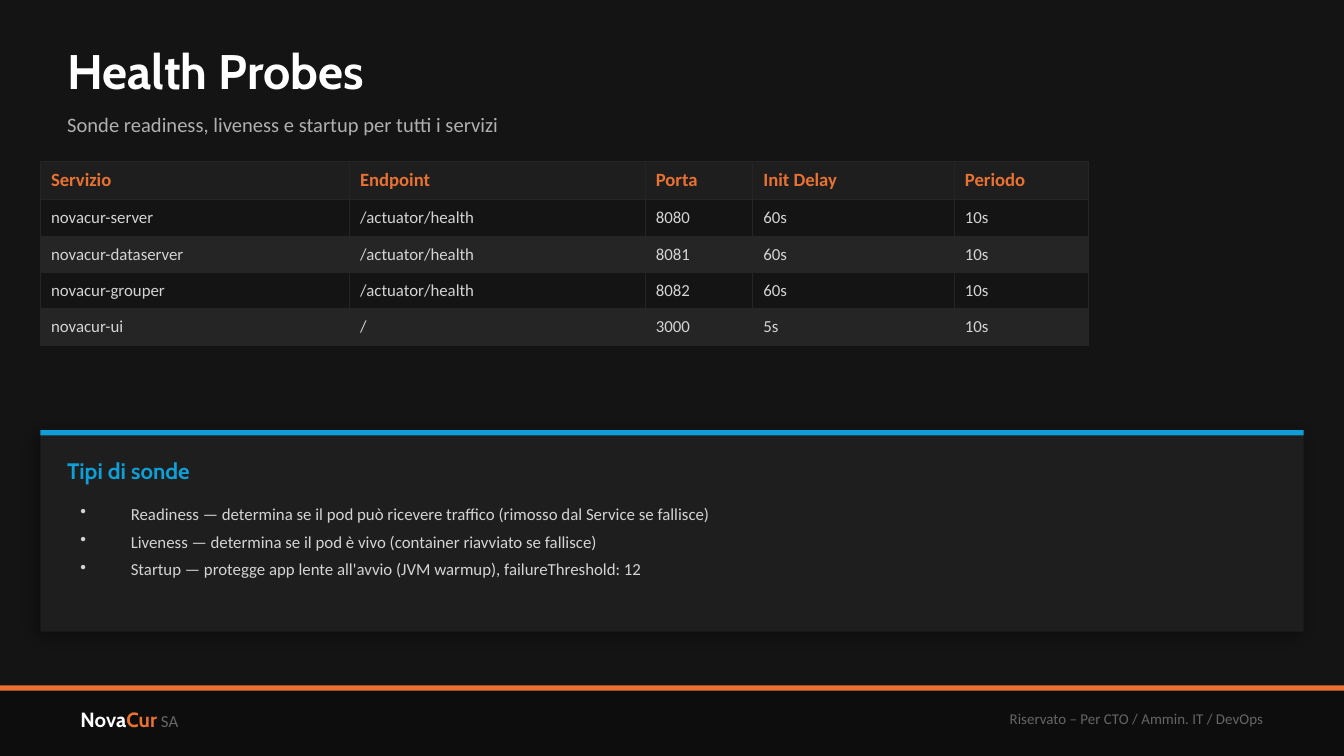
from lxml import etree
from pptx import Presentation, util as u
from pptx.dml.color import RGBColor
from pptx.enum import shapes, text
from pptx.oxml import parse_xml
from pptx.oxml.ns import nsdecls, qn

BACK = RGBColor(0x14, 0x14, 0x14)
DARK = RGBColor(0x0D, 0x0D, 0x0D)
CARD = RGBColor(0x1E, 0x1E, 0x1E)
BAND = RGBColor(0x25, 0x25, 0x25)
WHITE = RGBColor(0xFF, 0xFF, 0xFF)
LIGHT = RGBColor(0xD4, 0xD4, 0xD4)
GREY = RGBColor(0xB0, 0xB0, 0xB0)
DIM = RGBColor(0x66, 0x66, 0x66)
ORANGE = RGBColor(0xE9, 0x71, 0x32)
BLUE = RGBColor(0x0F, 0x9E, 0xD5)
HEAD, BODY = "Cabin", "Calibri"

deck = Presentation()
deck.slide_width, deck.slide_height = u.Inches(10), u.Inches(5.625)
# Grid: 100 columns by 112.5 rows
COL = deck.slide_width / 100
ROW = deck.slide_height / 112.5
slide = deck.slides.add_slide(deck.slide_layouts[5])
slide.background.fill.solid()
slide.background.fill.fore_color.rgb = BACK


def bar(x, y, w, h, color):
    box = slide.shapes.add_shape(shapes.MSO_SHAPE.RECTANGLE, int(x * COL),
                                 int(y * ROW), int(w * COL), int(h * ROW))
    box.shadow.inherit = False
    box.fill.solid()
    box.fill.fore_color.rgb = color
    box.line.fill.background()
    return box


def style(font, face, size, color, bold=False):
    font.name, font.size, font.bold = face, u.Pt(size), bold
    font.color.rgb = color


# Footer band
bar(0, 102, 100, 10.5, DARK)
bar(0, 102, 100, 0.8, ORANGE)

# Card with soft shadow and top rule
card = bar(3, 64, 94, 30, CARD)
glow = card._element.spPr.find(qn("a:effectLst"))
glow.append(parse_xml(
    f'<a:outerShdw {nsdecls("a")} blurRad="{u.Pt(8)}" dist="{u.Pt(3)}" '
    'dir="8100000" algn="bl" rotWithShape="0"><a:srgbClr val="000000">'
    '<a:alpha val="35000"/></a:srgbClr></a:outerShdw>'))
bar(3, 64, 94, 0.8, BLUE)

# Title, subtitle and card heading
lines = [
    ("Health Probes", 5, 11, HEAD, 26, WHITE, True),
    ("Sonde readiness, liveness e startup per tutti i servizi",
     15, 7, BODY, 11, GREY, False),
    ("Tipi di sonde", 67, 6, HEAD, 12, BLUE, True),
]
for n, (words, y, h, face, size, color, bold) in enumerate(lines):
    box = slide.shapes.add_textbox(0, 0, 0, 0) if n else slide.shapes.title
    box.left, box.top = int(5 * COL), int(y * ROW)
    box.width, box.height = int(90 * COL), int(h * ROW)
    frame = box.text_frame
    frame.text = words
    frame.word_wrap = True
    frame.auto_size = text.MSO_AUTO_SIZE.NONE
    frame.vertical_anchor = text.MSO_ANCHOR.MIDDLE
    frame.margin_left = frame.margin_right = 0
    frame.margin_top = frame.margin_bottom = 0
    frame.paragraphs[0].alignment = text.PP_ALIGN.LEFT
    style(frame.paragraphs[0].font, face, size, color, bold)

# Footer texts
notes = [
    (5, 30, text.PP_ALIGN.LEFT, [("Nova", HEAD, 11, WHITE, True),
                                 ("Cur", HEAD, 11, ORANGE, True),
                                 (" SA", BODY, 9, DIM, False)]),
    (55, 40, text.PP_ALIGN.RIGHT,
     [("Riservato – Per CTO / Ammin. IT / DevOps", BODY, 8, DIM, False)]),
]
for x, w, side, runs in notes:
    box = slide.shapes.add_textbox(int(x * COL), int(103 * ROW),
                                   int(w * COL), int(8 * ROW))
    box.text_frame.word_wrap = True
    box.text_frame.vertical_anchor = text.MSO_ANCHOR.MIDDLE
    par = box.text_frame.paragraphs[0]
    par.alignment = side
    for words, *look in runs:
        run = par.add_run()
        run.text = words
        style(run.font, *look)

# Probe table
data = [
    ("Servizio", "Endpoint", "Porta", "Init Delay", "Periodo"),
    ("novacur-server", "/actuator/health", "8080", "60s", "10s"),
    ("novacur-dataserver", "/actuator/health", "8081", "60s", "10s"),
    ("novacur-grouper", "/actuator/health", "8082", "60s", "10s"),
    ("novacur-ui", "/", "3000", "5s", "10s"),
]
widths = (23, 22, 8, 15, 10)
grid = slide.shapes.add_table(len(data), len(widths), int(3 * COL),
                              int(24 * ROW), int(sum(widths) * COL),
                              int(26 * ROW)).table
for col, w in zip(grid.columns, widths):
    col.width = int(w * COL)
for r, names in enumerate(data):
    grid.rows[r].height = int((5.3 if r else 5.5) * ROW)
    for c, words in enumerate(names):
        cell = grid.cell(r, c)
        cell.text = words
        cell.vertical_anchor = text.MSO_ANCHOR.MIDDLE
        cell.margin_left = cell.margin_right = u.Inches(0.08)
        cell.margin_top = cell.margin_bottom = u.Inches(0.06)
        for edge in ("lnL", "lnR", "lnT", "lnB"):
            cell._tc.get_or_add_tcPr().append(parse_xml(
                f'<a:{edge} {nsdecls("a")} w="{u.Pt(0.5)}"><a:solidFill>'
                f'<a:srgbClr val="{BAND}"/></a:solidFill></a:{edge}>'))
        cell.fill.solid()
        cell.fill.fore_color.rgb = (BAND, BACK)[r % 2] if r else CARD
        look = (9, LIGHT) if r else (10, ORANGE, True)
        style(cell.text_frame.paragraphs[0].font, BODY, *look)

# Bullet list
items = [
    "Readiness — determina se il pod può ricevere traffico (rimosso dal Service se fallisce)",
    "Liveness — determina se il pod è vivo (container riavviato se fallisce)",
    "Startup — protegge app lente all'avvio (JVM warmup), failureThreshold: 12",
]
box = slide.shapes.add_textbox(int(5 * COL), int(74 * ROW),
                               int(90 * COL), int(18 * ROW))
box.text_frame.word_wrap = True
box.text_frame.text = "\n".join(items)
for par in box.text_frame.paragraphs:
    par.space_after = u.Pt(4)
    props = par._p.get_or_add_pPr()
    props.set("marL", str(u.Pt(27)))
    props.set("indent", str(-u.Pt(27)))
    etree.SubElement(props, qn("a:buChar")).set("char", "•")
    style(par.font, BODY, 9, LIGHT)

deck.save("out.pptx")
